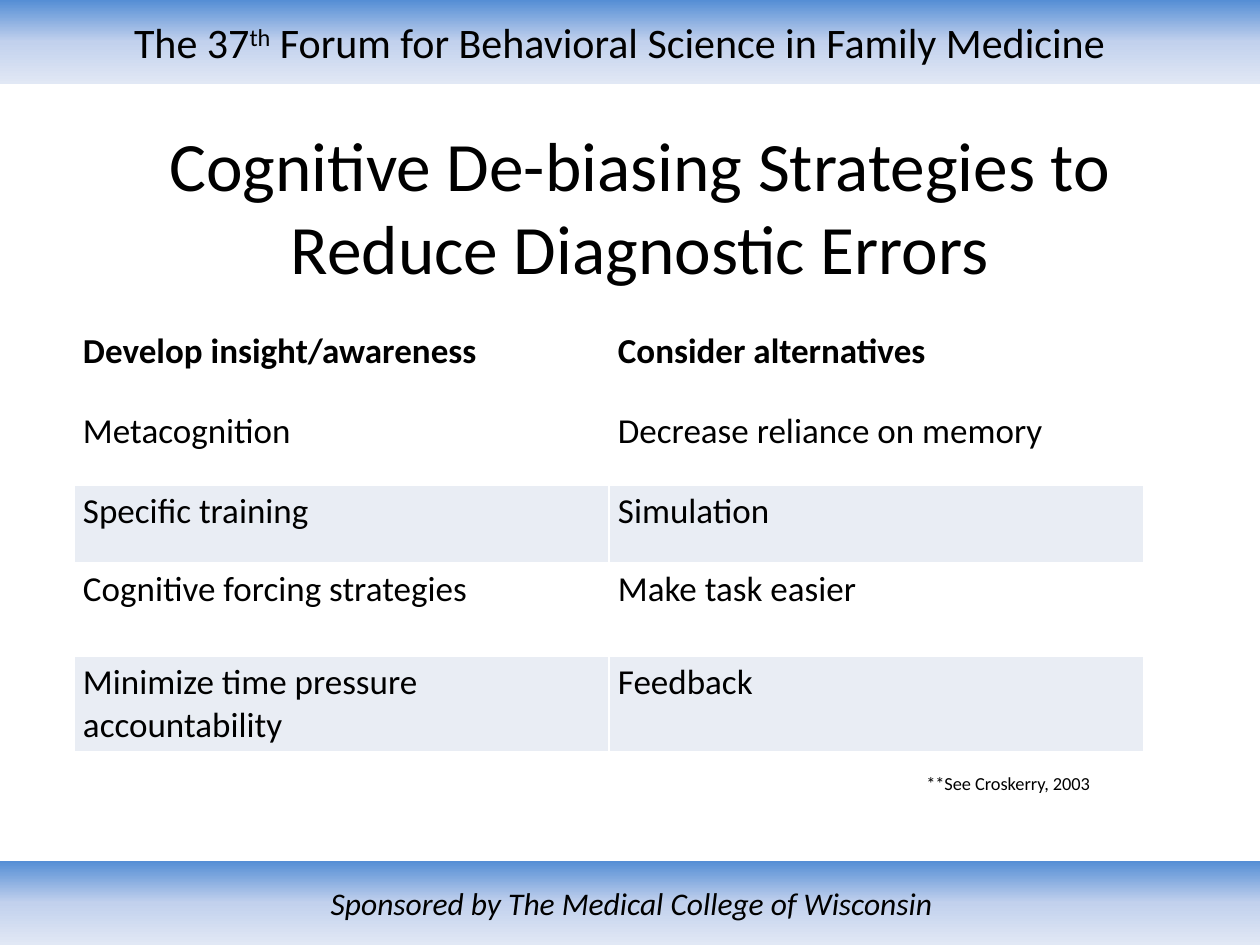
from copy import deepcopy
from pptx import Presentation
from pptx.dml.color import RGBColor
from pptx.enum.shapes import MSO_SHAPE as Shape
from pptx.enum.text import MSO_ANCHOR as Anchor, MSO_AUTO_SIZE as Fit, PP_ALIGN as Align
from pptx.oxml.ns import qn
from pptx.util import Pt

SCALE = 914400 / 126
BLACK, BAND = "000000", "E9EDF4"
BLUES = [(0, "558ED5"), (0.5, "C2D1ED"), (1, "E1E8F5")]
ROWS = [
    ("Develop insight/awareness", "Consider alternatives"),
    ("Metacognition", "Decrease reliance on memory"),
    ("Specific training", "Simulation"),
    ("Cognitive forcing strategies", "Make task easier"),
    ("Minimize time pressure accountability", "Feedback"),
]
HEIGHTS = [80, 80, 78, 93, 94]


def px(*nums):
    return [round(n * SCALE) for n in nums]


def rgb(code):
    return RGBColor.from_string(code)


class Deck:
    """Hold the text style and the current slide, and draw each kind of element."""

    def __init__(self, face):
        self.face = face
        self.prs = Presentation()
        self.prs.slide_width, self.prs.slide_height = px(1260, 945)
        self.slide = self.prs.slides.add_slide(self.prs.slide_layouts[5])

    def style(self, para, size, align=Align.LEFT, bold=False, italic=False):
        para.alignment = align
        font = para.font
        font.name, font.size = self.face, Pt(size)
        font.bold, font.italic = bold, italic
        font.color.rgb = rgb(BLACK)

    def band(self, box, parts, size, italic=False, right=13):
        bar = self.slide.shapes.add_shape(Shape.RECTANGLE, *px(*box))
        bar.shadow.inherit = False
        bar.line.fill.background()
        bar.fill.gradient()
        bar.fill.gradient_angle = 270
        stops = bar._element.spPr.find(".//" + qn("a:gsLst"))
        stops.append(deepcopy(stops[-1]))
        for stop, (spot, code) in zip(bar.fill.gradient_stops, BLUES):
            stop.position = spot
            stop.color.rgb = rgb(code)
        frame = bar.text_frame
        frame.word_wrap = True
        frame.vertical_anchor = Anchor.MIDDLE
        frame.margin_right = px(right)[0]
        para = frame.paragraphs[0]
        for text, base in parts:
            run = para.add_run()
            run.text = text
            if base:
                run.font._element.set("baseline", str(base * 1000))
        self.style(para, size, Align.CENTER, italic=italic)

    def title(self, box, text, size):
        head = self.slide.shapes.title
        head.left, head.top, head.width, head.height = px(*box)
        frame = head.text_frame
        frame.text = text
        frame.word_wrap = True
        frame.auto_size = Fit.NONE
        frame.vertical_anchor = Anchor.MIDDLE
        self.style(frame.paragraphs[0], size, Align.CENTER)

    def table(self, left, top, width, size):
        box = px(left, top, width, sum(HEIGHTS))
        grid = self.slide.shapes.add_table(len(ROWS), len(ROWS[0]), *box).table
        for r, texts in enumerate(ROWS):
            grid.rows[r].height = px(HEIGHTS[r])[0]
            for c, text in enumerate(texts):
                cell = grid.cell(r, c)
                cell.text = text
                cell.margin_left, cell.margin_right = px(9, 9)
                cell.margin_top, cell.margin_bottom = px(5, 5)
                if r and r % 2 == 0:
                    cell.fill.solid()
                    cell.fill.fore_color.rgb = rgb(BAND)
                else:
                    cell.fill.background()
                self.style(cell.text_frame.paragraphs[0], size, bold=r == 0)

    def note(self, box, text, size):
        frame = self.slide.shapes.add_textbox(*px(*box)).text_frame
        frame.text = text
        frame.word_wrap = True
        frame.auto_size = Fit.SHAPE_TO_FIT_TEXT
        self.style(frame.paragraphs[0], size)


def main():
    deck = Deck("Calibri")
    head = [("The 37", 0), ("th", 30), (" Forum for Behavioral Science in Family Medicine", 0)]
    deck.band((0, 0, 1260, 84), head, 24, right=33)
    deck.band((0, 861, 1264, 84), [("Sponsored by The Medical College of Wisconsin", 0)], 18, True)
    deck.title((73, 158, 1134, 94), "Cognitive De-biasing Strategies to Reduce Diagnostic Errors", 39.6)
    deck.table(74, 325, 1070, 20)
    deck.note((914, 766, 379, 35), "**See Croskerry, 2003", 10.5)
    deck.prs.save("out.pptx")


if __name__ == "__main__":
    main()
